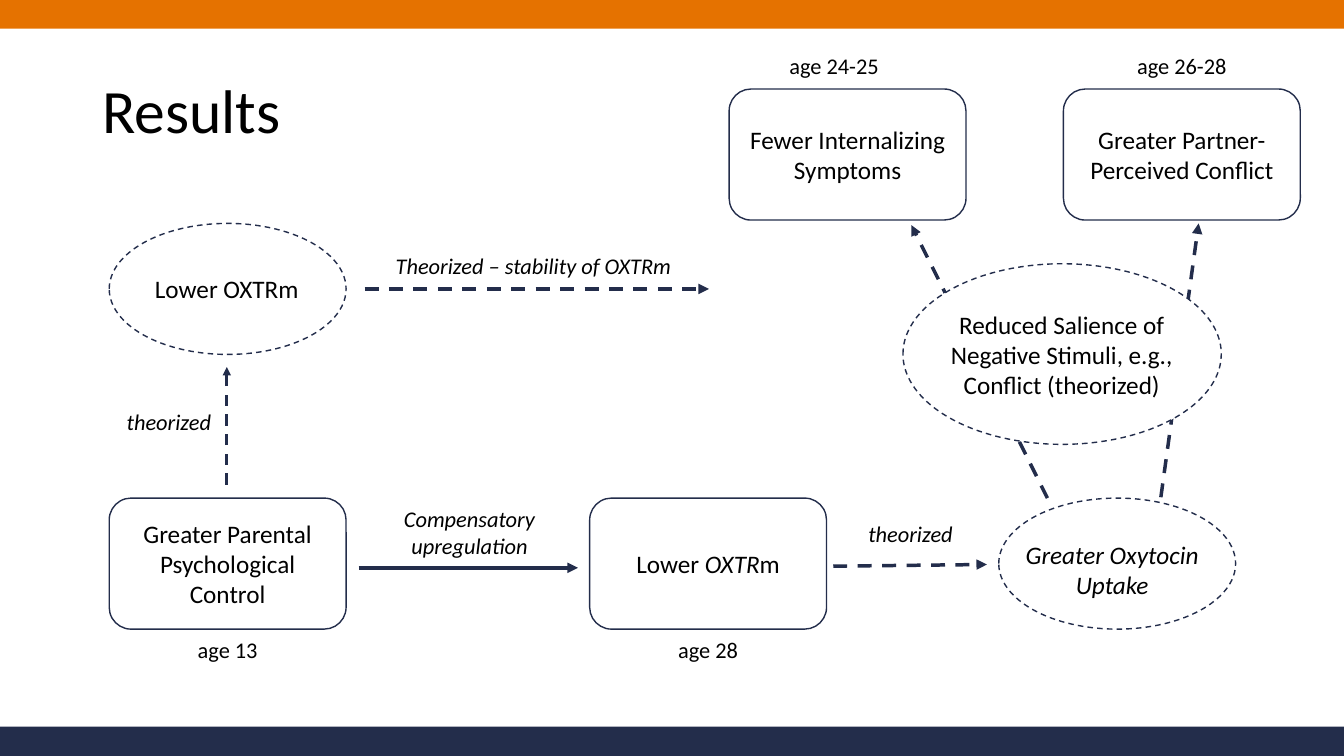
from pptx import Presentation
from pptx.dml.color import RGBColor
from pptx.enum.dml import MSO_LINE as Dash
from pptx.enum.shapes import MSO_CONNECTOR as Link, MSO_SHAPE as Kind
from pptx.enum.text import MSO_ANCHOR as Anchor, PP_ALIGN as Align
from pptx.oxml.ns import qn
from pptx.util import Inches, Pt
from lxml.etree import SubElement as sub

NAVY = RGBColor(0x23, 0x2D, 0x4B)
ORANGE = RGBColor(0xE5, 0x72, 0x00)
WHITE = RGBColor(0xFF, 0xFF, 0xFF)
BLACK = RGBColor(0x00, 0x00, 0x00)

# The slide is a grid of square cells.
COLS, ROWS = 160, 90
CELL = Inches(7.5) / ROWS

# Usual size of a node, and the places that nodes share.
NODE_W, NODE_H = 28.2, 15.6
LEFT, MID = 13, 70.2
TOP, LOW = 10.6, 59.3


def cells(*counts):
    return [round(n * CELL) for n in counts]


def write(frame, runs, size, align=Align.CENTER, anchor=Anchor.MIDDLE):
    """Fill a frame with one paragraph of (text, italic) runs."""
    frame.word_wrap = True
    frame.vertical_anchor = anchor
    para = frame.paragraphs[0]
    para.alignment = align
    for text, slant in runs:
        run = para.add_run()
        run.text = text
        look = {"name": "Calibri", "size": Pt(size), "italic": slant}
        for key, value in look.items():
            setattr(run.font, key, value)
        run.font.color.rgb = BLACK
    return para


def shape(slide, kind, spot, fill=None, dash=None, edge=True):
    item = slide.shapes.add_shape(kind, *cells(*spot))
    item.shadow.inherit = False
    if fill is None:
        item.fill.background()
    else:
        item.fill.solid()
        item.fill.fore_color.rgb = fill
    if edge:
        item.line.color.rgb = NAVY
        item.line.width = Pt(1)
        item.line.dash_style = dash
    else:
        item.line.fill.background()
    return item


def bar(slide, top, fill):
    shape(slide, Kind.RECTANGLE, (-1.3, top, COLS + 2.6, 4), fill, edge=False)


def box(slide, left, top, *runs):
    spot = (left, top, NODE_W, NODE_H)
    item = shape(slide, Kind.ROUNDED_RECTANGLE, spot)
    write(item.text_frame, runs, 18)


def oval(slide, left, top, wide=NODE_W, high=NODE_H, fill=None):
    shape(slide, Kind.OVAL, (left, top, wide, high), fill, Dash.DASH)


def label(slide, text, mid, top, wide, size=16, slant=False, lines=1):
    """Centre a text on a column, with its first line at a row."""
    high = 1.2 + lines * size / 5
    spot = cells(mid - wide / 2, top, wide, high)
    item = slide.shapes.add_textbox(*spot)
    write(item.text_frame, [(text, slant)], size, anchor=Anchor.TOP)


def arrow(slide, start, end, width=2.5, dash=Dash.DASH):
    line = slide.shapes.add_connector(Link.STRAIGHT, *cells(*start, *end))
    line.line.color.rgb = NAVY
    line.line.width = Pt(width)
    line.line.dash_style = dash
    props = line._element.spPr
    sub(props.find(qn("a:ln")), qn("a:tailEnd"), type="triangle")
    sub(props, qn("a:effectLst"))


def title(slide, text):
    item = slide.shapes.add_textbox(*cells(11, 4.8, 138, 17.4))
    para = write(item.text_frame, [(text, False)], 44, Align.LEFT)
    para.line_spacing = 0.9


def main():
    deck = Presentation()
    deck.slide_width, deck.slide_height = cells(COLS, ROWS)
    slide = deck.slides.add_slide(deck.slide_layouts[6])

    title(slide, "Results")
    bar(slide, -0.6, ORANGE)
    bar(slide, 86.5, NAVY)

    box(slide, LEFT, LOW, ("Greater Parental Psychological Control", False))
    box(slide, MID, LOW, ("Lower ", False), ("OXTR", True), ("m", False))
    box(slide, 86.8, TOP, ("Fewer Internalizing Symptoms", False))
    box(slide, 126.6, TOP, ("Greater Partner-Perceived Conflict", False))

    for text, mid, top in (
        ("age 13", LEFT + NODE_W / 2, 75.1),
        ("age 28", MID + NODE_W / 2, 75.1),
        ("age 24-25", 99.3, 5.6),
        ("age 26-28", 140.7, 5.6),
    ):
        label(slide, text, mid, top, 16.4)

    arrow(slide, (42.7, 67.6), (68.8, 67.6), dash=Dash.SOLID)
    arrow(slide, (27, 57.7), (27, 43.7), width=2)
    for start, end in (
        ((99.2, 67.4), (117.5, 67.2)),
        ((124.7, 59.3), (108.5, 26.8)),
        ((138.2, 59.2), (142.7, 26.6)),
        ((43.4, 34.4), (84.4, 34.4)),
    ):
        arrow(slide, start, end)

    oval(slide, LEFT, 26.6)
    label(slide, "Lower OXTRm", 27, 32, 20.4, 18)
    oval(slide, 118.9, LOW)
    label(slide, "Greater Oxytocin Uptake", 132.4, 63.6, 23.4, 18, True, 2)
    oval(slide, 107.5, 31.4, 37.9, 21.5, WHITE)
    label(slide, "Reduced Salience of Negative Stimuli, e.g., Conflict (theorized)",
          126.4, 36.2, 30.2, 18, lines=3)

    label(slide, "theorized", 20.1, 48, 14, slant=True)
    label(slide, "theorized", 108.4, 61.3, 14, slant=True)
    label(slide, "Theorized – stability of OXTRm", 63.5, 29.4, 37.3, slant=True)
    label(slide, "Compensatory upregulation", 55.9, 59.5, 29.5, slant=True, lines=2)

    deck.save("out.pptx")


if __name__ == "__main__":
    main()
